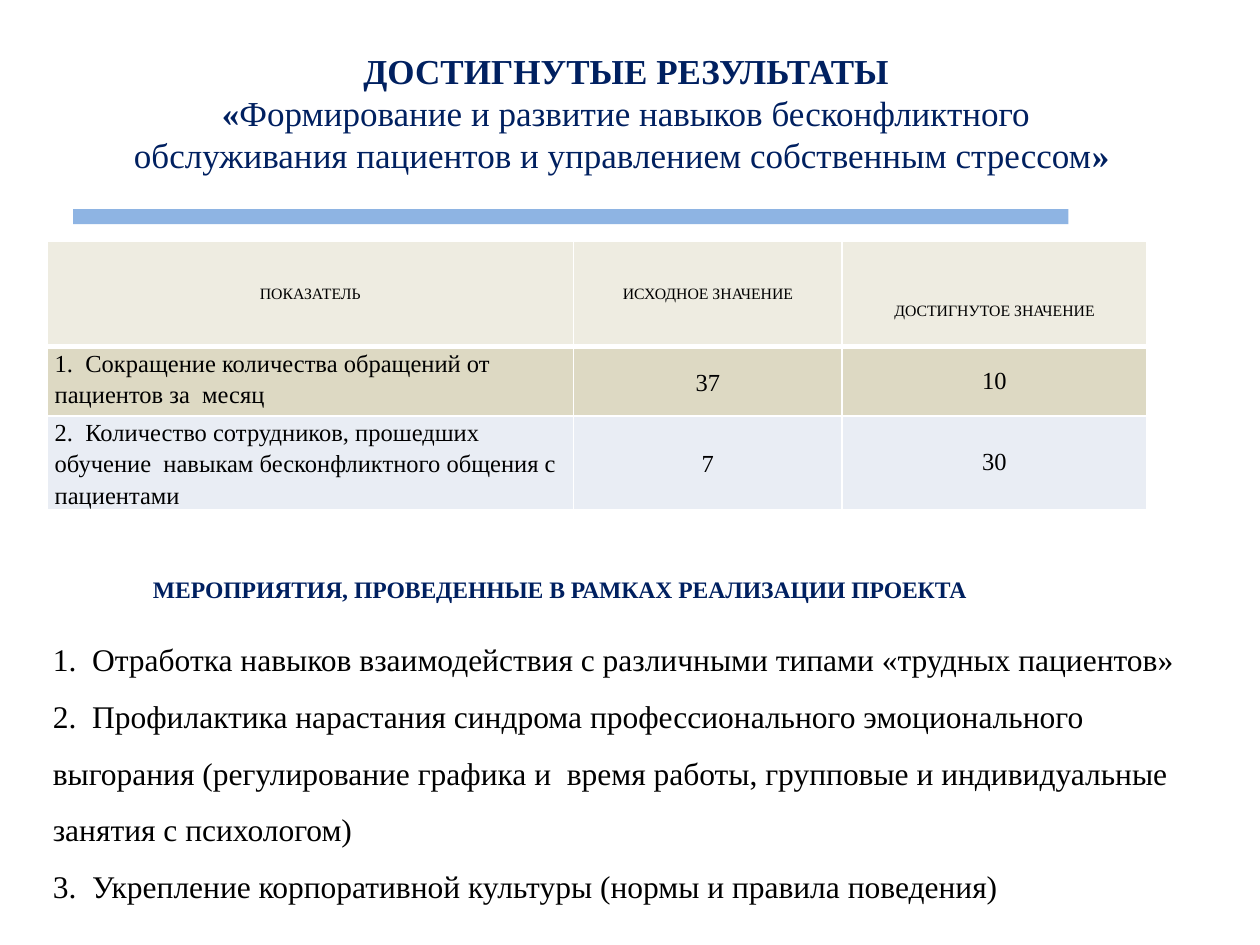
from lxml.etree import SubElement
from pptx import Presentation
from pptx.dml.color import RGBColor
from pptx.enum.shapes import MSO_SHAPE
from pptx.enum.text import MSO_ANCHOR, PP_ALIGN
from pptx.oxml.ns import qn
from pptx.util import Pt

TITLE = [
    [("ДОСТИГНУТЫЕ РЕЗУЛЬТАТЫ", True)],
    [("«", True),
     ("Формирование и развитие навыков бесконфликтного обслуживания пациентов "
      "и управлением собственным стрессом", False),
     ("» ", True)],
]
INDICATORS = [
    ("ПОКАЗАТЕЛЬ", "ИСХОДНОЕ ЗНАЧЕНИЕ", "ДОСТИГНУТОЕ ЗНАЧЕНИЕ"),
    ("1.  Сокращение количества обращений от пациентов за  месяц", "37", "10"),
    ("2.  Количество сотрудников, прошедших обучение  навыкам бесконфликтного "
     "общения с пациентами", "7", "30"),
]
ACTIVITIES_HEADING = [[(" МЕРОПРИЯТИЯ, ПРОВЕДЕННЫЕ В РАМКАХ РЕАЛИЗАЦИИ ПРОЕКТА", True)]]
ACTIVITIES = [
    [("1.  Отработка навыков взаимодействия с различными типами «трудных пациентов»", False)],
    [("2.  Профилактика нарастания синдрома профессионального эмоционального выгорания "
      "(регулирование графика и  время работы, групповые и индивидуальные занятия "
      "с психологом)", False)],
    [("3.  Укрепление корпоративной культуры (нормы и правила поведения)", False)],
]

THEME = {
    "font": "Times New Roman",
    "navy": "002060", "black": "000000", "white": "FFFFFF", "bar": "8EB4E3",
    "rows": ("EEECE1", "DDD9C3", "E9EDF4"),
    "title": 20, "heading": 13.5, "body": 18, "header": 9, "cell": 14,
}
COLUMN_WIDTHS = (301, 153.4, 174.2)
ROW_HEIGHTS = (60.5, 39.6, 53)
INSET_SIDES = ("margin_left", "margin_top", "margin_right", "margin_bottom")


def apply(target, values):
    for name, value in values.items():
        setattr(target, name, value)


def insets(across, down):
    return dict(zip(INSET_SIDES, map(Pt, (across, down, across, down))))


def write(frame, paragraphs, size, color, layout):
    for index, runs in enumerate(paragraphs):
        paragraph = frame.paragraphs[0] if index == 0 else frame.add_paragraph()
        apply(paragraph, layout)
        for text, bold in runs:
            run = paragraph.add_run()
            run.text = text
            apply(run.font, {"name": THEME["font"], "size": Pt(size), "bold": bold})
            run.font.color.rgb = RGBColor.from_string(THEME[color])


def add_text(slide, bounds, paragraphs, size, color, layout, frame_format):
    frame = slide.shapes.add_textbox(*map(Pt, bounds)).text_frame
    apply(frame, {"word_wrap": True, **frame_format})
    write(frame, paragraphs, size, color, layout)


def add_borders(cell, bottom):
    properties = cell._tc.get_or_add_tcPr()
    for side, width in (("L", 1), ("R", 1), ("T", 1), ("B", bottom)):
        line = SubElement(properties, qn(f"a:ln{side}"), w=str(Pt(width)))
        fill = SubElement(line, qn("a:solidFill"))
        SubElement(fill, qn("a:srgbClr"), val=THEME["white"])


def add_indicators(slide):
    bounds = (26.8, 137.6, sum(COLUMN_WIDTHS), sum(ROW_HEIGHTS))
    table = slide.shapes.add_table(
        len(INDICATORS), len(COLUMN_WIDTHS), *map(Pt, bounds)).table
    for column, width in zip(table.columns, COLUMN_WIDTHS):
        column.width = Pt(width)
    for r, (row, height) in enumerate(zip(table.rows, ROW_HEIGHTS)):
        row.height = Pt(height)
        header = r == 0
        for c, cell in enumerate(row.cells):
            label = c == 0 and not header
            achieved = c == 2
            if header:
                spacing = 3.0 if achieved else 1.0
            else:
                spacing = 1.0 if achieved else 1.15
            add_borders(cell, 3 if header else 1)
            cell.fill.solid()
            cell.fill.fore_color.rgb = RGBColor.from_string(THEME["rows"][r])
            apply(cell, {
                "vertical_anchor": MSO_ANCHOR.TOP if label else MSO_ANCHOR.MIDDLE,
                **insets(4.5, 3 if header or achieved else 0),
            })
            write(cell.text_frame, [[(INDICATORS[r][c], False)]],
                  THEME["header" if header else "cell"], "black",
                  {"alignment": PP_ALIGN.LEFT if label else PP_ALIGN.CENTER,
                   "line_spacing": spacing})


def main():
    """Build the slide of achieved results and project activities."""
    deck = Presentation()
    apply(deck, {"slide_width": Pt(720), "slide_height": Pt(540)})
    slide = deck.slides.add_slide(deck.slide_layouts[6])

    add_indicators(slide)
    add_text(slide, (66.2, 24.5, 583.2, 94.3), TITLE, THEME["title"], "navy",
             {"alignment": PP_ALIGN.CENTER}, {})

    divider = slide.shapes.add_shape(
        MSO_SHAPE.RECTANGLE, *map(Pt, (41.8, 119.5, 568.8, 8.6)))
    divider.shadow.inherit = False
    divider.fill.solid()
    divider.fill.fore_color.rgb = RGBColor.from_string(THEME["bar"])
    divider.line.fill.background()

    add_text(slide, (77, 324.7, 497.5, 87), ACTIVITIES_HEADING, THEME["heading"], "navy",
             {"alignment": PP_ALIGN.JUSTIFY}, {})
    add_text(slide, (25.2, 351.4, 663.1, 169.2), ACTIVITIES, THEME["body"], "black",
             {"line_spacing": 1.5},
             {"vertical_anchor": MSO_ANCHOR.MIDDLE, **insets(5, 3)})

    deck.save("out.pptx")


if __name__ == "__main__":
    main()
